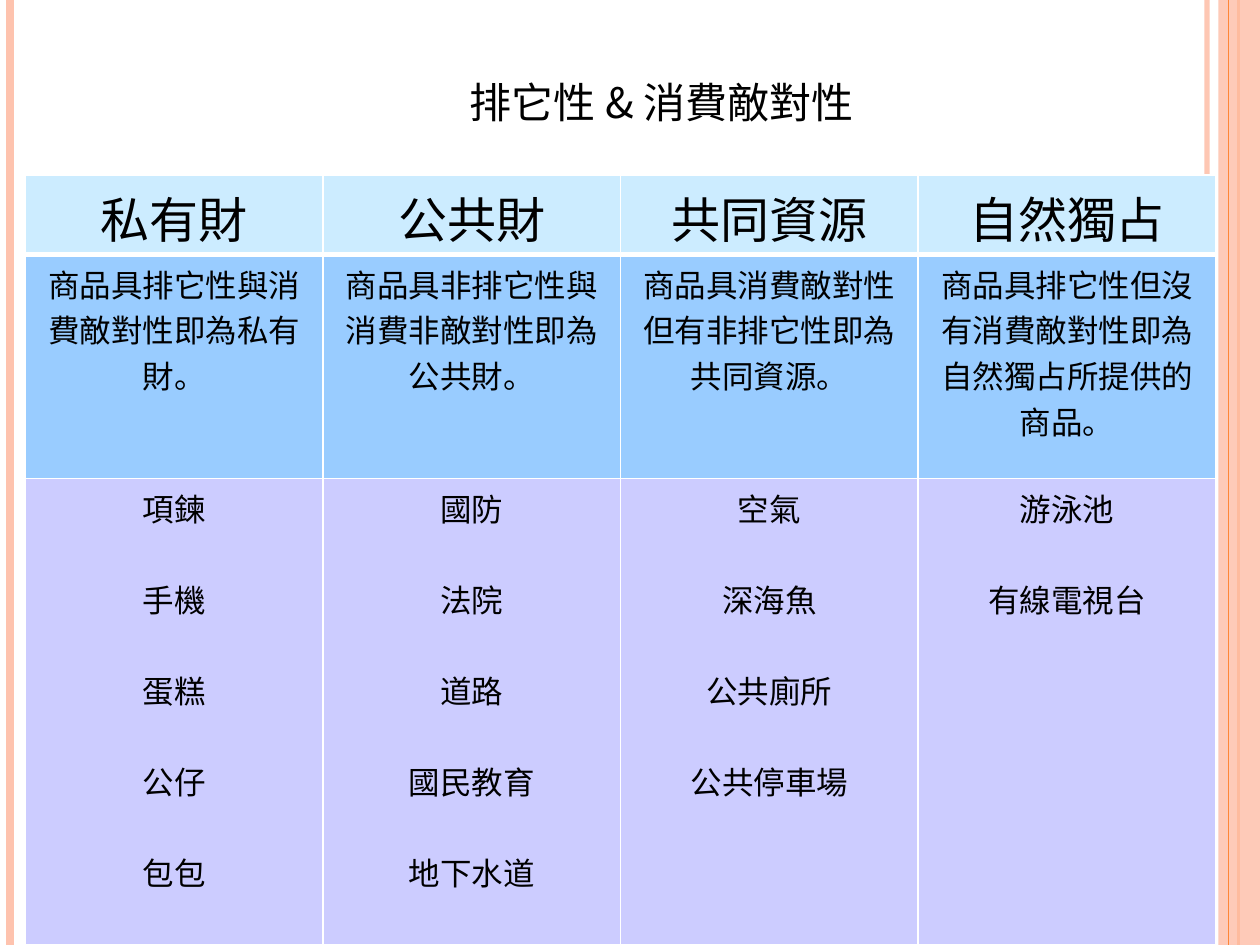
from dataclasses import dataclass
from typing import Optional

from lxml.etree import SubElement
from pptx import Presentation
from pptx.dml.color import RGBColor as Color
from pptx.enum.shapes import MSO_CONNECTOR as Link, MSO_SHAPE as Shape
from pptx.enum.text import MSO_ANCHOR as Anchor, PP_ALIGN as Align
from pptx.oxml import parse_xml
from pptx.oxml.ns import nsdecls, qn
from pptx.util import Cm, Pt

FONT = "Noto Sans CJK SC"
BLACK = Color(0x00, 0x00, 0x00)
WHITE = Color(0xFF, 0xFF, 0xFF)
PEACH = Color(0xFE, 0xC3, 0xAE)
ORANGE = Color(0xFE, 0x86, 0x37)
CYAN = Color(0xCC, 0xEC, 0xFF)
BLUE = Color(0x99, 0xCC, 0xFF)
LILAC = Color(0xCC, 0xCC, 0xFF)
WIDE, HIGH = 25.4, 19.05
GAP = Pt(26)


@dataclass
class Rule:
    x: float
    color: Color
    width: float
    alpha: Optional[int] = None


@dataclass
class Band:
    """One table row; each cell is a list of paragraphs."""
    height: float
    fill: Color
    size: int
    under: float
    cells: list[list[str]]


BACK = [Rule(24.33, PEACH, 3, 93), Rule(0.2, PEACH, 4.5), Rule(24.97, ORANGE, 1.5)]
FRONT = Rule(24.77, ORANGE, 0.75)

BANDS = [
    Band(1.6, CYAN, 28, 3, [["私有財"], ["公共財"], ["共同資源"], ["自然獨占"]]),
    Band(4.52, BLUE, 18, 1, [
        ["商品具排它性與消費敵對性即為私有財。"],
        ["商品具非排它性與消費非敵對性即為公共財。"],
        ["商品具消費敵對性但有非排它性即為共同資源。"],
        ["商品具排它性但沒有消費敵對性即為自然獨占所提供的商品。"],
    ]),
    Band(9.4, LILAC, 18, 1, [
        ["項鍊", "手機", "蛋糕", "公仔", "包包"],
        ["國防", "法院", "道路", "國民教育", "地下水道"],
        ["空氣", "深海魚", "公共廁所", "公共停車場"],
        ["游泳池", "有線電視台"],
    ]),
]


def fade(part, alpha: int) -> None:
    """Set the opacity, in percent, of the solid colour inside part."""
    tone = next(part.iter(qn("a:srgbClr")))
    SubElement(tone, qn("a:alpha")).set("val", str(alpha * 1000))


def draw_rule(slide, rule: Rule) -> None:
    line = slide.shapes.add_connector(
        Link.STRAIGHT, Cm(rule.x), 0, Cm(rule.x), Cm(HIGH))
    line.line.color.rgb = rule.color
    line.line.width = Pt(rule.width)
    props = line._element.spPr
    SubElement(props, qn("a:effectLst"))
    if rule.alpha:
        fade(props, rule.alpha)


def draw_strip(slide) -> None:
    left = 24.56
    strip = slide.shapes.add_shape(
        Shape.RECTANGLE, Cm(left), 0, Cm(WIDE - left), Cm(HIGH))
    strip.shadow.inherit = False
    strip.fill.solid()
    strip.fill.fore_color.rgb = PEACH
    strip.line.fill.background()
    fade(strip._element.spPr, 87)


def write(par, text: str, size: int) -> None:
    par.text = text
    par.alignment = Align.CENTER
    font = par.font
    font.name, font.size, font.bold = FONT, Pt(size), False
    font.color.rgb = BLACK
    SubElement(par._p.pPr.find(qn("a:defRPr")), qn("a:ea")).set("typeface", FONT)
    # Runs carry the same font so that every viewer honours it.
    run = par.runs[0]
    run.font.name, run.font.size, run.font.bold = FONT, Pt(size), False
    run.font.color.rgb = BLACK
    SubElement(run._r.rPr, qn("a:ea")).set("typeface", FONT)


def draw_title(slide) -> None:
    box = slide.shapes.add_textbox(Cm(2.54), Cm(0.76), Cm(21.59), Cm(1.96))
    frame = box.text_frame
    frame.word_wrap = True
    frame.vertical_anchor = Anchor.BOTTOM
    par = frame.paragraphs[0]
    write(par, "排它性 & 消費敵對性", 30)
    par.runs[0]._r.rPr.set("cap", "small")


def edge(cell, widths: dict[str, float]) -> None:
    """Give the cell white borders of the given widths in points."""
    props = cell._tc.get_or_add_tcPr()
    for spot, (side, width) in enumerate(widths.items()):
        props.insert(spot, parse_xml(
            f'<a:ln{side} {nsdecls("a")} w="{int(Pt(width))}"><a:solidFill>'
            f'<a:srgbClr val="{WHITE}"/></a:solidFill></a:ln{side}>'))


def draw_table(slide) -> None:
    count = len(BANDS[0].cells)
    total = sum(band.height for band in BANDS)
    table = slide.shapes.add_table(
        len(BANDS), count, Cm(0.51), Cm(3.53), Cm(24), Cm(total)).table
    for col in table.columns:
        col.width = Cm(24 / count)
    over = 1
    for row, band in enumerate(BANDS):
        table.rows[row].height = Cm(band.height)
        for col, texts in enumerate(band.cells):
            cell = table.cell(row, col)
            cell.fill.solid()
            cell.fill.fore_color.rgb = band.fill
            edge(cell, {"L": 1, "R": 1, "T": over, "B": band.under})
            frame = cell.text_frame
            for spot, text in enumerate(texts):
                par = frame.add_paragraph() if spot else frame.paragraphs[0]
                write(par, text, band.size)
                if spot:
                    par.space_before = GAP
        over = band.under


def main() -> None:
    deck = Presentation()
    deck.slide_width, deck.slide_height = Cm(WIDE), Cm(HIGH)
    slide = deck.slides.add_slide(deck.slide_layouts[6])
    slide.background.fill.solid()
    slide.background.fill.fore_color.rgb = WHITE
    for rule in BACK:
        draw_rule(slide, rule)
    draw_strip(slide)
    draw_rule(slide, FRONT)
    draw_title(slide)
    draw_table(slide)
    deck.save("out.pptx")


if __name__ == "__main__":
    main()
